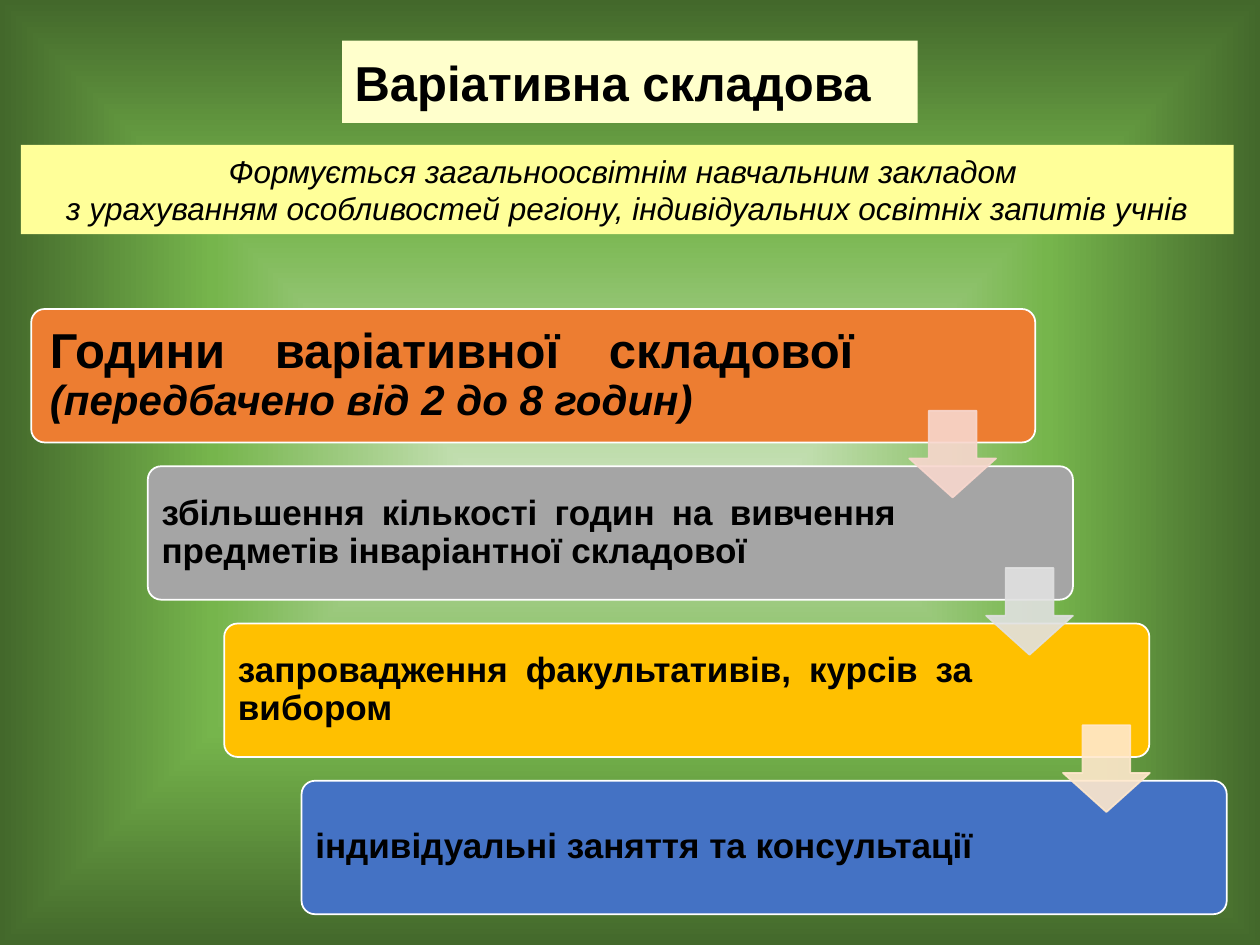
from dataclasses import dataclass

from lxml.etree import SubElement
from pptx import Presentation
from pptx.dml.color import RGBColor
from pptx.enum.shapes import MSO_SHAPE as Shape
from pptx.enum.text import MSO_ANCHOR as Anchor, PP_ALIGN as Align
from pptx.oxml import parse_xml
from pptx.oxml.ns import nsdecls, qn
from pptx.util import Cm, Pt


@dataclass(frozen=True)
class Theme:
    font: str = "Arial"
    ink: str = "000000"
    outline: str = "FFFFFF"
    title_fill: str = "FFFFCC"
    intro_fill: str = "FFFF99"
    cards: tuple = ("ED7D31", "A5A5A5", "FFC000", "4472C4")
    arrows: tuple = ("F8D7CE", "E1E1E1", "FFE8CC")
    backdrop: tuple = ((0, "C5E0B4"), (55, "76B54C"), (100, "43682B"))
    heading: int = 28
    subheading: int = 24
    body: int = 20
    intro: int = 18


class SlideBuilder:
    """Draws the elements of one slide in a given theme."""

    def __init__(self, slide, theme):
        self.slide = slide
        self.theme = theme

    def backdrop(self):
        self.slide.background.fill.solid()
        holder = self.slide.element.find(".//" + qn("p:bgPr"))
        stops = "".join(
            f'<a:gs pos="{percent * 1000}"><a:srgbClr val="{color}"/></a:gs>'
            for percent, color in self.theme.backdrop
        )
        gradient = parse_xml(
            f'<a:gradFill {nsdecls("a")} rotWithShape="1"><a:gsLst>{stops}</a:gsLst>'
            '<a:path path="shape"><a:fillToRect l="50000" t="50000" r="50000" b="50000"/>'
            "</a:path></a:gradFill>"
        )
        holder.replace(holder[0], gradient)

    def shape(self, kind, left, top, width, height, fill, outline=None, adjustments=()):
        shape = self.slide.shapes.add_shape(kind, Cm(left), Cm(top), Cm(width), Cm(height))
        shape.shadow.inherit = False
        for index, value in enumerate(adjustments):
            shape.adjustments[index] = value
        shape.fill.solid()
        shape.fill.fore_color.rgb = RGBColor.from_string(fill)
        if outline:
            shape.line.color.rgb = RGBColor.from_string(outline)
            shape.line.width = Pt(1)
        else:
            shape.line.fill.background()
        return shape

    def format_span(self, span, size, bold=False, italic=False):
        span.font.name = self.theme.font
        span.font.size = Pt(size)
        span.font.bold = bold
        span.font.italic = italic
        span.font.color.rgb = RGBColor.from_string(self.theme.ink)

    def banner(self, left, top, width, height, fill, text, size, align, **style):
        box = self.shape(Shape.RECTANGLE, left, top, width, height, fill)
        frame = box.text_frame
        frame.word_wrap = True
        frame.vertical_anchor = Anchor.MIDDLE
        frame.text = text
        for para in frame.paragraphs:
            para.alignment = align
            self.format_span(para.runs[0], size, **style)

    def card(self, left, top, width, height, fill, spans, inset):
        box = self.shape(Shape.ROUNDED_RECTANGLE, left, top, width, height, fill,
                         self.theme.outline, (0.1,))
        frame = box.text_frame
        frame.word_wrap = True
        frame.vertical_anchor = Anchor.MIDDLE
        frame.margin_left = frame.margin_top = frame.margin_bottom = Cm(inset)
        frame.margin_right = Cm(inset + 3.28)
        para = frame.paragraphs[0]
        para.alignment = Align.JUSTIFY
        para.line_spacing = 0.9
        for text, size, italic in spans:
            span = para.add_run()
            span.text = text
            self.format_span(span, size, bold=True, italic=italic)

    def arrow(self, left, top, size, color):
        arrow = self.shape(Shape.DOWN_ARROW, left, top, size, size, color, color, (0.55, 0.45))
        for tint in arrow.element.spPr.iter(qn("a:srgbClr")):
            SubElement(tint, qn("a:alpha")).set("val", "90000")


def main():
    theme = Theme()
    deck = Presentation()
    deck.slide_width, deck.slide_height = Cm(25.4), Cm(19.05)
    page = SlideBuilder(deck.slides.add_slide(deck.slide_layouts[6]), theme)

    page.backdrop()
    page.banner(6.9, 0.82, 11.6, 1.66, theme.title_fill, "Варіативна складова\u00a0",
                theme.heading, Align.LEFT, bold=True)
    page.banner(0.42, 2.92, 24.45, 1.8, theme.intro_fill,
                "Формується загальноосвітнім навчальним закладом \n"
                "з урахуванням особливостей регіону, індивідуальних освітніх запитів учнів",
                theme.intro, Align.CENTER, italic=True)

    pitch = 3.17
    cards = (
        (0.63, 20.24, 0.3, (("Години варіативної складової ", theme.heading, False),
                            ("(передбачено від 2 до 8 годин)", theme.subheading, True))),
        (2.98, 18.65, 0.2, (("збільшення кількості годин на вивчення предметів "
                             "інваріантної складової", theme.body, False),)),
        (4.52, 18.65, 0.2, (("запровадження факультативів, курсів за вибором",
                             theme.body, False),)),
        (6.08, 18.65, 0.2, (("індивідуальні заняття\u00a0та консультації",
                             theme.body, False),)),
    )
    for row, ((left, width, inset, spans), fill) in enumerate(zip(cards, theme.cards)):
        page.card(left, 6.23 + row * pitch, width, 2.69, fill, spans, inset)
    for row, color in enumerate(theme.arrows):
        page.arrow(18.33 + row * 1.55, 8.28 + row * pitch, 1.75, color)

    deck.save("out.pptx")


if __name__ == "__main__":
    main()
